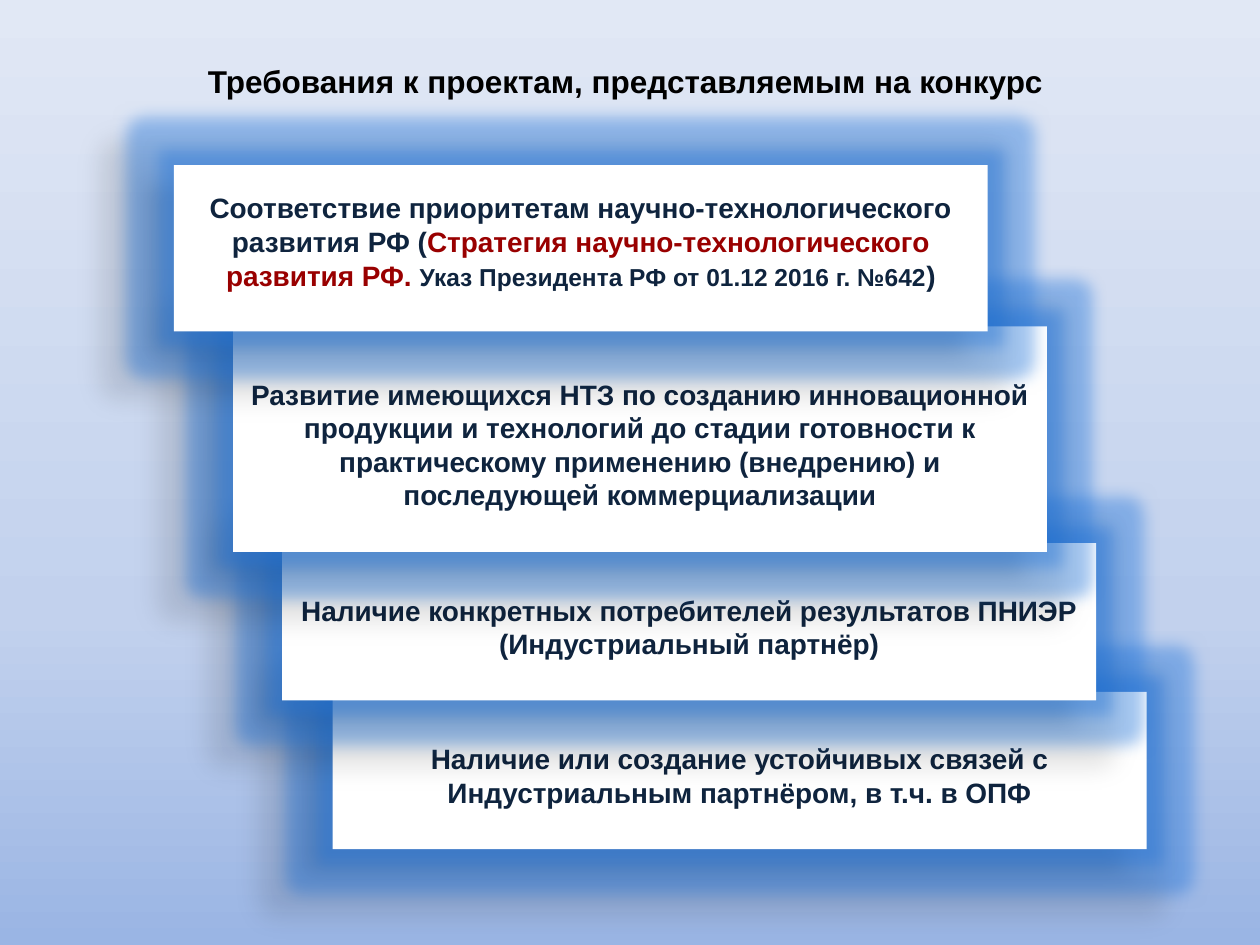
from pptx import Presentation
from pptx.dml.color import RGBColor
from pptx.enum.shapes import MSO_SHAPE
from pptx.enum.text import MSO_ANCHOR, PP_ALIGN
from pptx.oxml import parse_xml
from pptx.oxml.ns import nsdecls
from pptx.util import Inches, Pt

COLORS = {"white": "FFFFFF", "black": "000000", "navy": "0F243E", "red": "990000",
          "glow": "1F74DB", "bottom": "9AB5E4", "middle": "C2D1ED", "top": "E1E8F5"}

deck = Presentation()
deck.slide_width, deck.slide_height = Inches(10), Inches(7.5)
page = deck.slides.add_slide(deck.slide_layouts[6])
CELL = deck.slide_width // 100  # square grid: 100 columns by 75 rows


def cells(*counts):
    return [round(count * CELL) for count in counts]


def write(frame, spans, color, margins, gap=0):
    """Fill a frame with one centred bold paragraph of (text, size, color) spans."""
    frame.word_wrap = True
    frame.margin_left, frame.margin_top, frame.margin_right, frame.margin_bottom = cells(*margins)
    para = frame.paragraphs[0]
    para.alignment = PP_ALIGN.CENTER
    para.space_before = para.space_after = Pt(gap)
    para.font.name, para.font.bold = "Arial", True
    para.font.size = Pt(spans[0][1])
    para.font.color.rgb = RGBColor.from_string(COLORS[color])
    for text, size, span_color in spans:
        span = para.add_run()
        span.text = text
        if size != spans[0][1]:
            span.font.size = Pt(size)
        if span_color != color:
            span.font.color.rgb = RGBColor.from_string(COLORS[span_color])


# Background gradient, running upwards
stops = "".join(f'<a:gs pos="{share * 1000}"><a:srgbClr val="{COLORS[name]}"/></a:gs>'
                for share, name in ((0, "bottom"), (35, "middle"), (100, "top")))
page.background.fill.solid()
background = page.background.fill._xPr
background.replace(background[0], parse_xml(
    f'<a:gradFill {nsdecls("a")} rotWithShape="1"><a:gsLst>{stops}</a:gsLst>'
    '<a:lin ang="16200000" scaled="0"/></a:gradFill>'))

# Requirement cards, from back to front: left, top, height, top margin, gap, spans
cards = [
    (26.4, 54.9, 12.5, 3.9, 0, [
        ("Наличие или создание устойчивых связей с Индустриальным партнёром, в т.ч. в ОПФ", 16, "navy")]),
    (22.4, 43.1, 12.5, 3.9, 0, [
        ("Наличие конкретных потребителей результатов ПНИЭР (Индустриальный партнёр)", 16, "navy")]),
    (18.5, 25.9, 17.9, 3.9, 0, [
        ("Развитие имеющихся НТЗ по созданию инновационной продукции и технологий до стадии "
         "готовности к практическому применению (внедрению) и последующей коммерциализации",
         16, "navy")]),
    (13.8, 13.1, 13.2, 2, 6, [
        ("Соответствие приоритетам научно-технологического развития РФ (", 16, "navy"),
        ("Стратегия научно-технологического развития РФ. ", 16, "red"),
        ("Указ Президента РФ от 01.12 2016 г. №642", 14, "navy"),
        (")", 16, "navy")]),
]
for left, top, height, top_margin, gap, spans in cards:
    card = page.shapes.add_shape(MSO_SHAPE.RECTANGLE, *cells(left, top, 64.6, height))
    card.fill.solid()
    card.fill.fore_color.rgb = RGBColor.from_string(COLORS["white"])
    card.line.fill.background()
    # Blue glow and a soft shadow to the lower left
    card._element.spPr.append(parse_xml(
        f'<a:effectLst {nsdecls("a")}>'
        f'<a:glow rad="{Pt(18)}"><a:srgbClr val="{COLORS["glow"]}"><a:alpha val="40000"/></a:srgbClr></a:glow>'
        f'<a:outerShdw blurRad="{Pt(11.8)}" dist="{Pt(19.7)}" dir="8460000" algn="ctr" rotWithShape="0">'
        f'<a:srgbClr val="{COLORS["black"]}"><a:alpha val="28000"/></a:srgbClr></a:outerShdw>'
        '</a:effectLst>'))
    card.text_frame.vertical_anchor = MSO_ANCHOR.MIDDLE
    write(card.text_frame, spans, "navy", (1, top_margin, 1, 3.1), gap)

# Title
title = page.shapes.add_textbox(*cells(2, 4.4, 95.3, 4))
write(title.text_frame, [("Требования к проектам, представляемым на конкурс", 18, "black")],
      "black", (1, 0.5, 1, 0.5))

deck.save("out.pptx")
